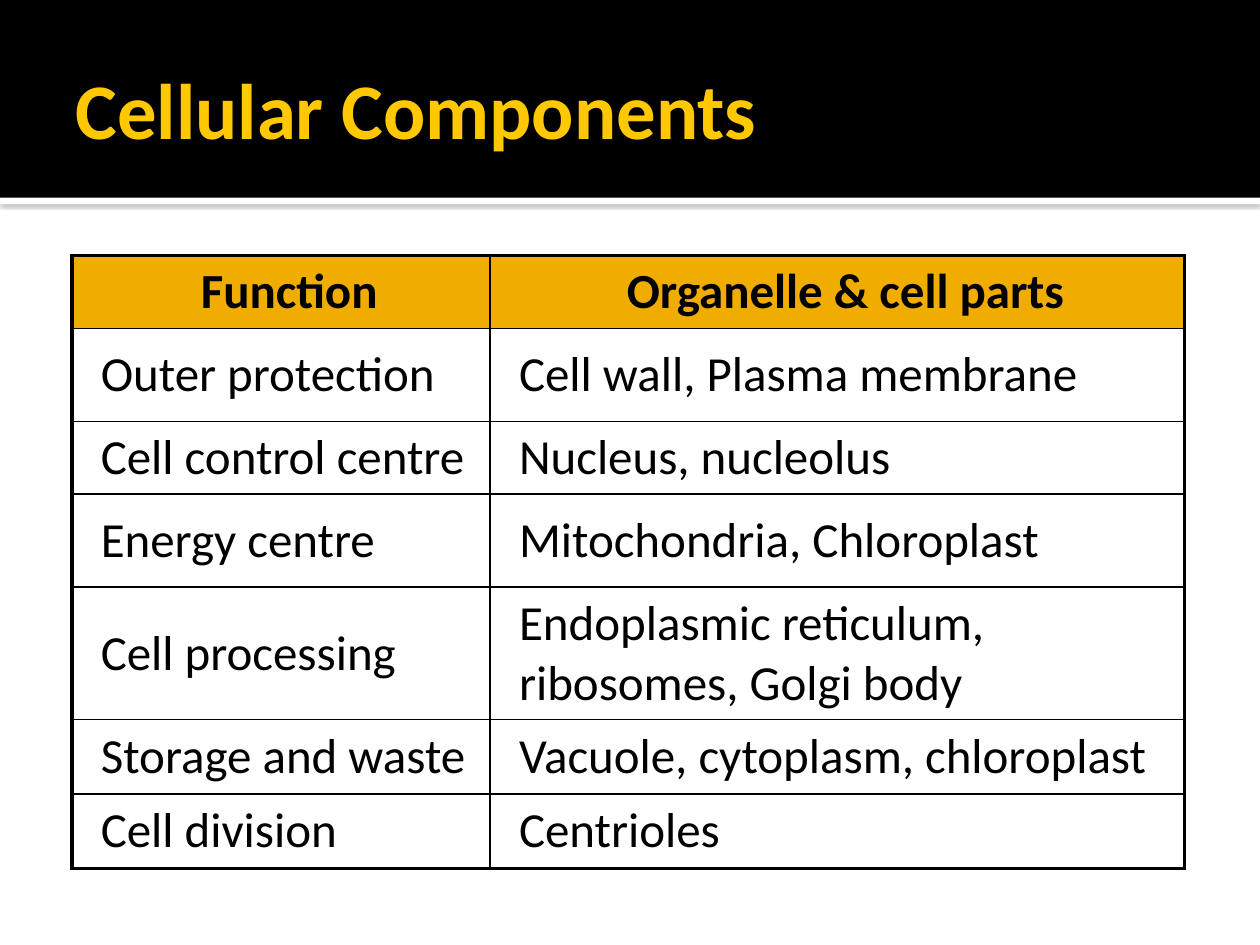
import pptx
import pptx.util
import pptx.dml.color
import pptx.enum.shapes
import pptx.enum.text
import pptx.oxml
import pptx.oxml.ns

Inches = pptx.util.Inches
Pt = pptx.util.Pt
RGB = pptx.dml.color.RGBColor
ALIGN = pptx.enum.text.PP_ALIGN
MIDDLE = pptx.enum.text.MSO_ANCHOR.MIDDLE
NS = pptx.oxml.ns.nsdecls("a")

BLACK = RGB(0x00, 0x00, 0x00)
WHITE = RGB(0xFF, 0xFF, 0xFF)
YELLOW = RGB(0xFF, 0xC8, 0x00)
AMBER = RGB(0xF0, 0xAD, 0x00)
GRAY = RGB(0x80, 0x80, 0x80)
FONT = "Calibri"

TITLE = "Cellular Components"
ROWS = [
    ("Function", "Organelle & cell parts"),
    ("Outer protection", "Cell wall, Plasma membrane"),
    ("Cell control centre", "Nucleus, nucleolus"),
    ("Energy centre", "Mitochondria, Chloroplast"),
    ("Cell processing", "Endoplasmic reticulum, ribosomes, Golgi body"),
    ("Storage and waste", "Vacuole, cytoplasm, chloroplast"),
    ("Cell division", "Centrioles"),
]
WIDTHS = [3.32, 5.51]
HEIGHTS = [0.57, 0.74, 0.57, 0.74, 1.05, 0.59, 0.59]
BAND = 1.57
THICK, THIN = 2.25, 1


def style(par, size, color, bold):
    font = par.font
    font.name, font.size, font.bold = FONT, Pt(size), bold
    font.color.rgb = color


def add_bar(slide, top, height, color):
    bar = slide.shapes.add_shape(
        pptx.enum.shapes.MSO_SHAPE.RECTANGLE,
        0, Inches(top), Inches(10), Inches(height))
    bar.fill.solid()
    bar.fill.fore_color.rgb = color
    bar.line.fill.background()
    bar.shadow.inherit = False
    return bar


def add_shade(bar):
    effects = bar._element.spPr.find(pptx.oxml.ns.qn("a:effectLst"))
    effects.append(pptx.oxml.parse_xml(
        f'<a:outerShdw {NS} blurRad="{Pt(2.5)}" dist="{Pt(0.8)}" dir="5400000">'
        f'<a:srgbClr val="{GRAY}"><a:alpha val="60000"/></a:srgbClr></a:outerShdw>'))


def add_edges(cell, row, col):
    outer = {"L": col == 0, "R": col == len(WIDTHS) - 1,
             "T": row == 0, "B": row == len(ROWS) - 1}
    props = cell._tc.get_or_add_tcPr()
    for i, (side, wide) in enumerate(outer.items()):
        props.insert(i, pptx.oxml.parse_xml(
            f'<a:ln{side} {NS} w="{Pt(THICK if wide else THIN)}"><a:solidFill>'
            f'<a:srgbClr val="{BLACK}"/></a:solidFill></a:ln{side}>'))


def fill_cell(cell, text, row, col):
    head = row == 0
    cell.text_frame.text = text
    par = cell.text_frame.paragraphs[0]
    par.alignment = ALIGN.CENTER if head else ALIGN.LEFT
    props = par._p.get_or_add_pPr()
    props.set("marL", str(Inches(0.13)))
    props.set("indent", "0")
    style(par, 28, BLACK, head)
    if not head:
        cell.vertical_anchor = MIDDLE
    cell.fill.solid()
    cell.fill.fore_color.rgb = AMBER if head else WHITE
    add_edges(cell, row, col)


def add_grid(slide):
    frame = slide.shapes.add_table(
        len(ROWS), len(WIDTHS), Inches(0.57), Inches(2.03),
        Inches(sum(WIDTHS)), Inches(sum(HEIGHTS)))
    table = frame.table
    for col, width in zip(table.columns, WIDTHS):
        col.width = Inches(width)
    for row, height in zip(table.rows, HEIGHTS):
        row.height = Inches(height)
    for r, texts in enumerate(ROWS):
        for c, text in enumerate(texts):
            fill_cell(table.cell(r, c), text, r, c)


def add_title(slide):
    title = slide.shapes.title
    title.left, title.top = Inches(0.5), Inches(0.17)
    title.width, title.height = Inches(9), Inches(1.37)
    frame = title.text_frame
    frame.text = TITLE
    frame.vertical_anchor = MIDDLE
    frame.margin_left = Inches(0.1)
    frame.margin_right = Inches(0.05)
    par = frame.paragraphs[0]
    par.alignment = ALIGN.LEFT
    style(par, 45, YELLOW, True)


def main():
    deck = pptx.Presentation()
    deck.slide_width, deck.slide_height = Inches(10), Inches(7.5)
    slide = deck.slides.add_slide(deck.slide_layouts[5])
    rule = add_bar(slide, BAND, 0.05, WHITE)
    add_shade(rule)
    band = add_bar(slide, 0, BAND, BLACK)
    tree = slide.shapes._spTree
    for bar in (band, rule):
        tree.insert(2, bar._element)
    add_title(slide)
    add_grid(slide)
    deck.save("out.pptx")


if __name__ == "__main__":
    main()
